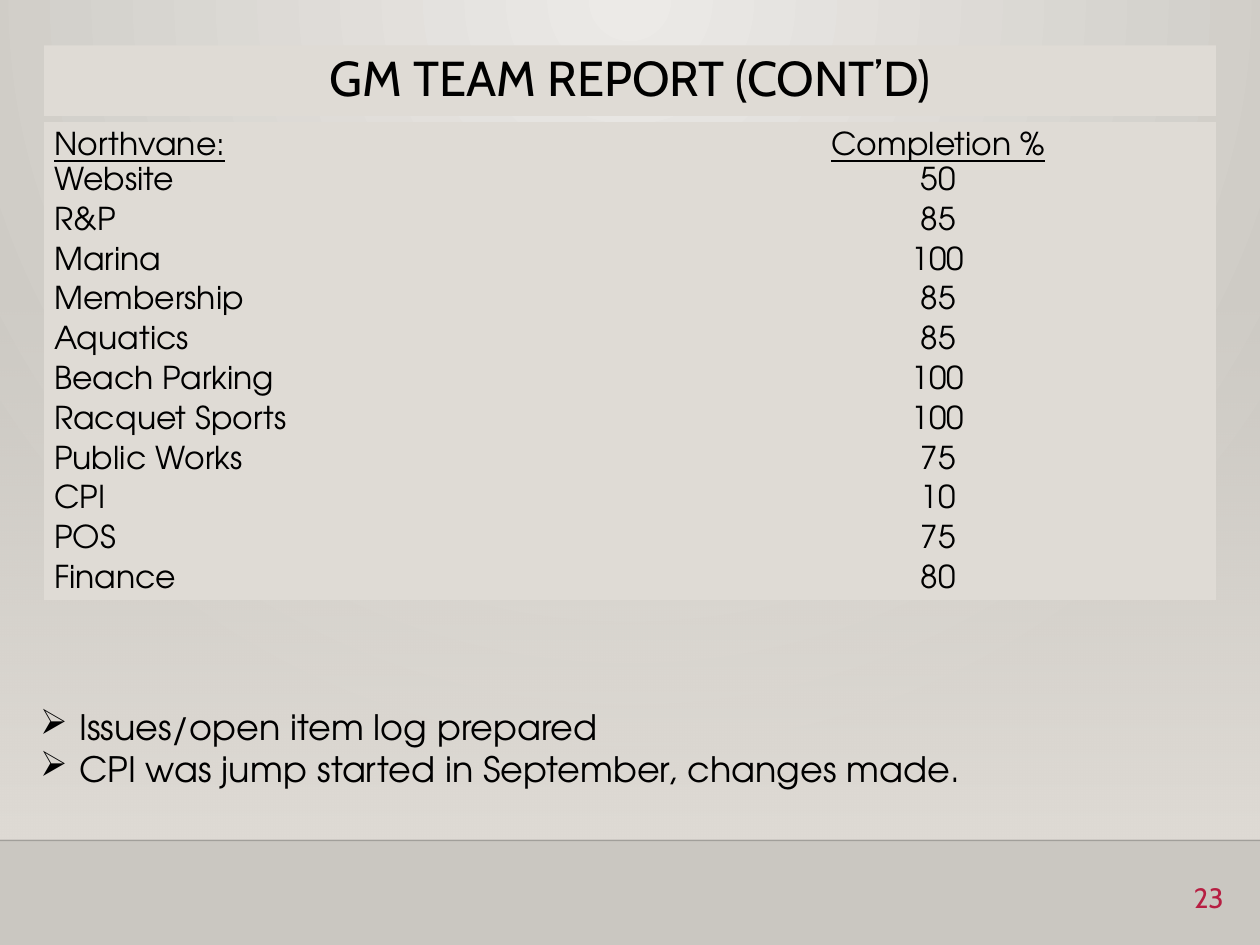
from lxml import etree
from pptx import Presentation
from pptx import util as u
from pptx.dml.color import RGBColor
from pptx.enum import shapes, text
from pptx.oxml import parse_xml
from pptx.oxml.ns import nsdecls, qn

COLORS = {"panel": "DFDBD5", "light": "ECEAE7", "dark": "CAC7C1",
          "ink": "000000", "accent": "B71E42"}
HEADING, BODY = "Cabin", "TeX Gyre Adventor"
NO_STYLE = "{2D5ABB26-0587-4C30-8999-92F81FD0307C}"
WIDTH, HEIGHT = 10, 7.5
LEFT, CONTENT_WIDTH = 0.35, 9.3

PROGRESS = [
    ("Northvane:", "Completion %"), ("Website", "50"), ("R&P", "85"),
    ("Marina", "100"), ("Membership", "85"), ("Aquatics", "85"),
    ("Beach Parking", "100"), ("Racquet Sports", "100"),
    ("Public Works", "75"), ("CPI", "10"), ("POS", "75"), ("Finance", "80"),
]
NOTES = ["Issues/open item log prepared",
         "CPI was jump started in September, changes made."]


def color(name):
    return RGBColor.from_string(COLORS[name])


def gradient(stops, shade):
    """Gradient fill from (position %, colour name, opacity %) stops."""
    marks = "".join(
        f'<a:gs pos="{position * 1000}"><a:srgbClr val="{COLORS[name]}">'
        f'<a:alpha val="{opacity * 1000}"/></a:srgbClr></a:gs>'
        for position, name, opacity in stops)
    return (f'<a:gradFill {nsdecls("a")} rotWithShape="1">'
            f'<a:gsLst>{marks}</a:gsLst>{shade}</a:gradFill>')


class SlideBuilder:
    def __init__(self, presentation):
        self.slide = presentation.slides.add_slide(presentation.slide_layouts[6])

    def background(self, fill):
        self.slide.element.cSld.insert(0, parse_xml(
            f'<p:bg {nsdecls("p", "a")}><p:bgPr>{fill}<a:effectLst/></p:bgPr></p:bg>'))

    def rectangle(self, *box):
        shape = self.slide.shapes.add_shape(
            shapes.MSO_SHAPE.RECTANGLE, *map(u.Inches, box))
        shape.shadow.inherit = False
        shape.line.fill.background()
        return shape

    def fade(self, *box):
        properties = self.rectangle(*box).element.spPr
        properties.find(qn("a:prstGeom")).addnext(parse_xml(gradient(
            [(0, "panel", 0), (100, "panel", 100)],
            '<a:lin ang="5400000" scaled="0"/>')))

    def rule(self, y, opacity):
        line = self.slide.shapes.add_connector(
            shapes.MSO_CONNECTOR.STRAIGHT, 0, u.Inches(y), u.Inches(WIDTH), u.Inches(y))
        line.line.width = u.Pt(1)
        line.line.color.rgb = color("ink")
        properties = line.element.spPr
        etree.SubElement(properties.find(".//" + qn("a:srgbClr")),
                         qn("a:alpha"), val=str(opacity * 1000))
        etree.SubElement(properties, qn("a:effectLst"))

    def add_words(self, paragraph, words, size, font=BODY, ink="ink",
                  align=text.PP_ALIGN.LEFT, underline=False):
        paragraph.alignment = align
        run = paragraph.add_run()
        run.text = words
        run.font.size = u.Pt(size)
        run.font.name = font
        run.font.underline = underline
        run.font.color.rgb = color(ink)

    def text_box(self, *box):
        frame = self.slide.shapes.add_textbox(*map(u.Inches, box)).text_frame
        frame.word_wrap = True
        return frame

    def title(self, words, *box):
        shape = self.rectangle(*box)
        shape.fill.solid()
        shape.fill.fore_color.rgb = color("panel")
        shape.text_frame.vertical_anchor = text.MSO_ANCHOR.MIDDLE
        paragraph = shape.text_frame.paragraphs[0]
        paragraph.line_spacing = 0.9
        self.add_words(paragraph, words, 28, HEADING, align=text.PP_ALIGN.CENTER)

    def page_number(self, words, *box):
        paragraph = self.text_box(*box).paragraphs[0]
        paragraph.line_spacing = 0.9
        self.add_words(paragraph, words, 16, HEADING, "accent", text.PP_ALIGN.RIGHT)

    def table(self, rows, widths, *box):
        frame = self.slide.shapes.add_table(
            len(rows), len(widths), *map(u.Inches, box))
        table = frame.table
        frame.element.find(".//" + qn("a:tableStyleId")).text = NO_STYLE
        for column, width in zip(table.columns, widths):
            column.width = u.Inches(width)
        aligns = (text.PP_ALIGN.LEFT, text.PP_ALIGN.CENTER)
        for r, row in enumerate(rows):
            for c, words in enumerate(row):
                cell = table.cell(r, c)
                cell.fill.solid()
                cell.fill.fore_color.rgb = color("panel")
                cell.margin_left = cell.margin_right = u.Inches(0.08)
                cell.margin_top = cell.margin_bottom = 0
                cell.vertical_anchor = (text.MSO_ANCHOR.MIDDLE if r
                                        else text.MSO_ANCHOR.BOTTOM)
                self.add_words(cell.text_frame.paragraphs[0], words, 18,
                               align=aligns[c], underline=r == 0)

    def bullets(self, items, *box):
        frame = self.text_box(*box)
        for index, words in enumerate(items):
            paragraph = frame.add_paragraph() if index else frame.paragraphs[0]
            properties = paragraph._p.get_or_add_pPr()
            indent = u.Inches(0.31)
            properties.set("marL", str(indent))
            properties.set("indent", str(-indent))
            etree.SubElement(properties, qn("a:buChar"), char="➢")
            self.add_words(paragraph, words, 20)


def main():
    presentation = Presentation()
    presentation.slide_width = u.Inches(WIDTH)
    presentation.slide_height = u.Inches(HEIGHT)
    builder = SlideBuilder(presentation)

    # Backdrop: glow from the top, fading panel and floor line
    builder.background(gradient(
        [(0, "light", 100), (100, "dark", 100)],
        '<a:path path="circle"><a:fillToRect l="43000" t="0" r="43000" b="100000"/></a:path>'))
    builder.fade(0, 2.2, WIDTH, 4.46)
    builder.rule(6.67, 20)

    # Page number and title
    builder.page_number("23", 9.14, 6.97, 0.67, 0.44)
    builder.title("GM TEAM REPORT (CONT’D)", LEFT, 0.36, CONTENT_WIDTH, 0.56)

    # Progress table and notes
    builder.table(PROGRESS, (4.89, 4.41), LEFT, 0.97, CONTENT_WIDTH, 3.79)
    builder.bullets(NOTES, 0.22, 5.55, 9.43, 0.77)

    presentation.save("out.pptx")


if __name__ == "__main__":
    main()
